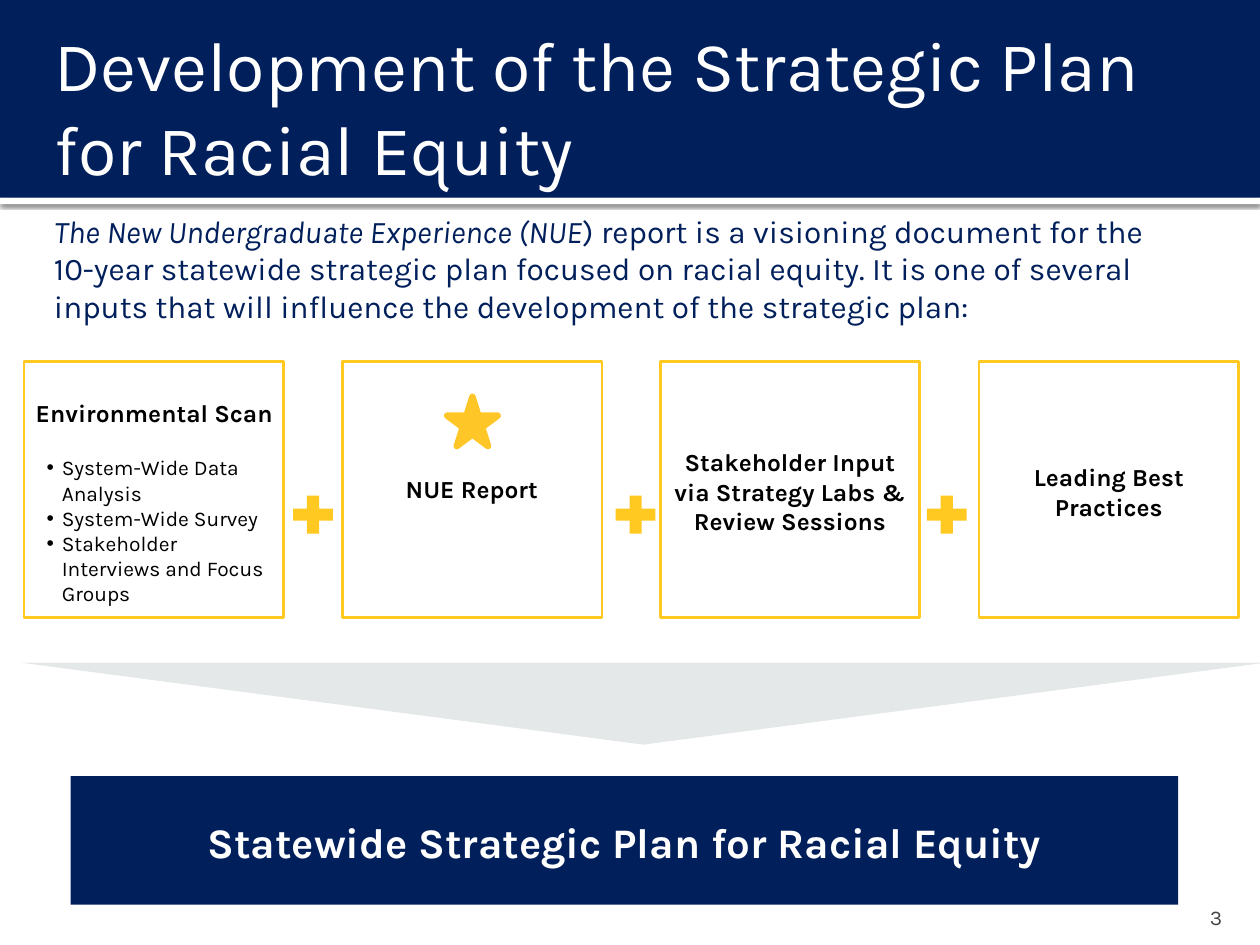
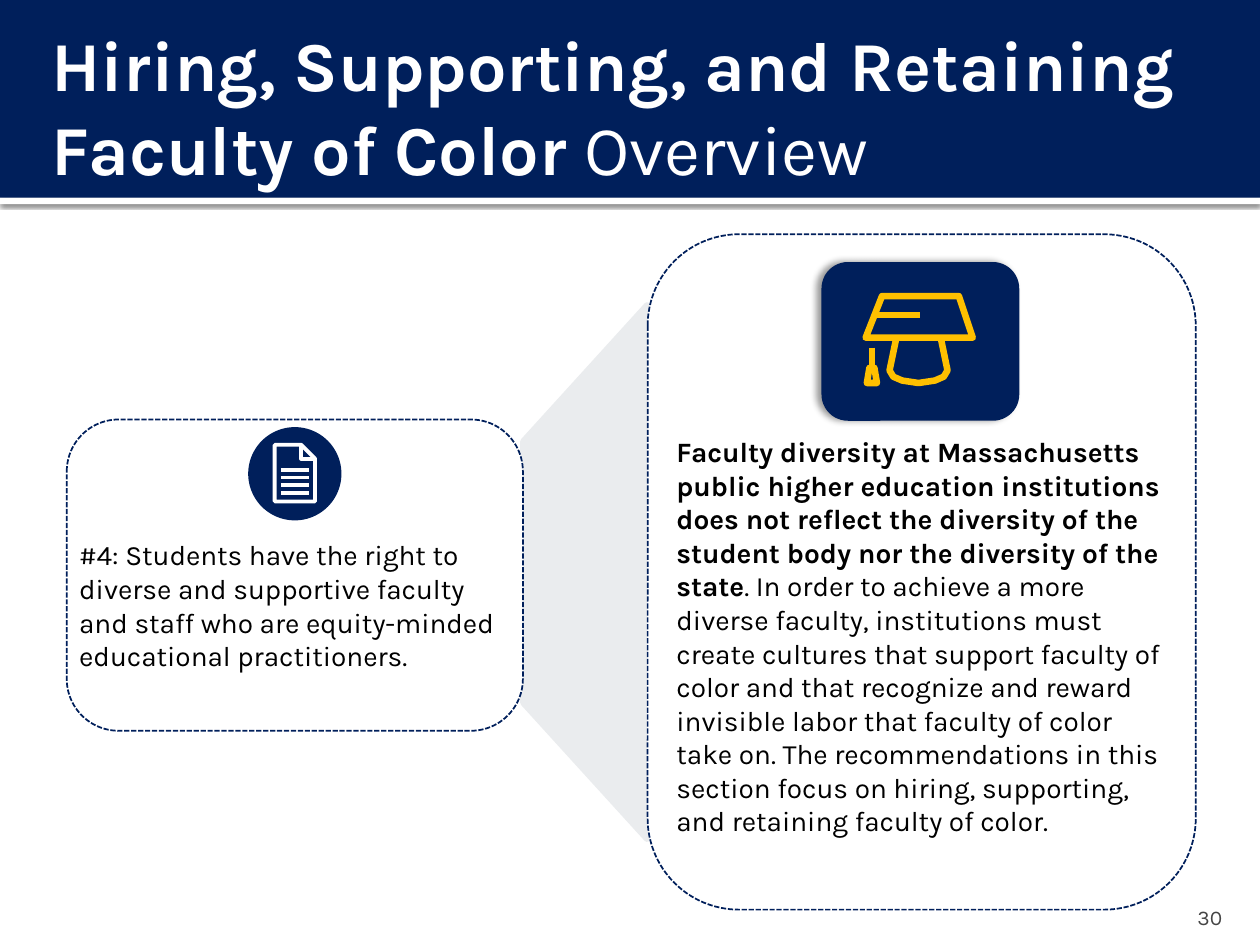
from lxml.etree import SubElement
from pptx import Presentation
from pptx.dml.color import RGBColor
from pptx.enum.dml import MSO_LINE
from pptx.enum.shapes import MSO_SHAPE
from pptx.enum.text import MSO_ANCHOR, MSO_AUTO_SIZE, PP_ALIGN
from pptx.oxml.ns import qn
from pptx.util import Pt

PX = 9144
FONT = "Karla"
NAVY = RGBColor(0x00, 0x1F, 0x5B)
GOLD = RGBColor(0xFF, 0xC9, 0x21)
STAR_GOLD = RGBColor(0xFF, 0xC6, 0x27)
CAP_GOLD = RGBColor(0xFF, 0xC0, 0x00)
WHITE = RGBColor(0xFF, 0xFF, 0xFF)
BLACK = RGBColor(0x00, 0x00, 0x00)
NUMBER_GRAY = RGBColor(0x45, 0x45, 0x45)
ARROW_GRAY = RGBColor(0xE4, 0xE8, 0xE8)
FUNNEL_GRAY = RGBColor(0xEA, 0xEC, 0xEE)


def write_text(shape, text, lead="", lead_style="bold", size=16, color=BLACK, bold=False,
               align=PP_ALIGN.LEFT, anchor=MSO_ANCHOR.TOP, insets=(10, 5, 10, 5), line_spacing=1.0):
    frame = shape.text_frame
    frame.word_wrap = True
    frame.auto_size = MSO_AUTO_SIZE.NONE
    frame.vertical_anchor = anchor
    frame.margin_left, frame.margin_top, frame.margin_right, frame.margin_bottom = [
        inset * PX for inset in insets]
    for index, line in enumerate(text.split("\n")):
        paragraph = frame.add_paragraph() if index else frame.paragraphs[0]
        paragraph.alignment = align
        paragraph.line_spacing = line_spacing
        paragraph.space_before = Pt(0)
        for part, is_lead in ((lead, True), (line, False)):
            if not part:
                continue
            run = paragraph.add_run()
            run.text = part
            run.font.name = FONT
            run.font.size = Pt(size)
            run.font.color.rgb = color
            run.font.bold = bold or (is_lead and lead_style == "bold")
            run.font.italic = is_lead and lead_style == "italic"


def add_block(slide, kind, box, fill=None, line=None, line_width=1.0, dash=None, shadow=None):
    shape = slide.shapes.add_shape(kind, *[length * PX for length in box])
    shape.shadow.inherit = False
    if fill is None:
        shape.fill.background()
    else:
        shape.fill.solid()
        shape.fill.fore_color.rgb = fill
    if line is None:
        shape.line.fill.background()
    else:
        shape.line.color.rgb = line
        shape.line.width = Pt(line_width)
        shape.line.dash_style = dash
    if shadow:
        blur, distance, degrees, opacity = shadow
        effects = shape._element.spPr.find(qn("a:effectLst"))
        outer = SubElement(effects, qn("a:outerShdw"), blurRad=str(Pt(blur)), dist=str(Pt(distance)),
                           dir=str(degrees * 60000), algn="ctr", rotWithShape="0")
        shadow_color = SubElement(outer, qn("a:srgbClr"), val="000000")
        SubElement(shadow_color, qn("a:alpha"), val=str(opacity * 1000))
    return shape


presentation = Presentation()
presentation.slide_width = 1000 * PX
presentation.slide_height = 750 * PX
plan_slide = presentation.slides.add_slide(presentation.slide_layouts[1])
faculty_slide = presentation.slides.add_slide(presentation.slide_layouts[5])

strip = add_block(plan_slide, MSO_SHAPE.RECTANGLE, (0, 157, 1000, 5), WHITE, shadow=(2.5, 0.8, 90, 60))
band = add_block(plan_slide, MSO_SHAPE.RECTANGLE, (0, 0, 1000, 157), NAVY)
for position, shape in enumerate((strip, band)):
    shape._element.nvSpPr.cNvPr.set("id", str(101 + position))
    presentation.slide_master.shapes._spTree.insert(2 + position, shape._element)

slide_headers = [
    (plan_slide, "3", "", "Development of the Strategic Plan for Racial Equity",
     (43, 38, 888, 92), (0, 0, 0, 0)),
    (faculty_slide, "30", "Hiring, Supporting, and Retaining Faculty of Color ", "Overview",
     (31, 38, 952, 92), (10, 5, 5, 5)),
]
for slide, number, lead, title_text, box, insets in slide_headers:
    title = slide.shapes.title
    title.left, title.top, title.width, title.height = [length * PX for length in box]
    write_text(title, title_text, lead=lead, size=40, color=WHITE,
               anchor=MSO_ANCHOR.MIDDLE, insets=insets)
    number_box = slide.shapes.add_textbox(900 * PX, 708 * PX, 80 * PX, 30 * PX)
    write_text(number_box, number, size=12, color=NUMBER_GRAY, align=PP_ALIGN.RIGHT,
               anchor=MSO_ANCHOR.BOTTOM, insets=(10, 5, 10, 0))

intro = plan_slide.shapes.add_textbox(33 * PX, 163 * PX, 907 * PX, 101 * PX)
write_text(intro, ") report is a visioning document for the 10-year statewide strategic plan focused on "
           "racial equity. It is one of several inputs that will influence the development of the "
           "strategic plan:", lead="The New Undergraduate Experience (NUE", lead_style="italic",
           size=18, color=NAVY)

inputs = [
    ("Environmental Scan", 19, (21, 316, 203, 24)),
    ("NUE Report", 272, (273, 376, 203, 24)),
    ("Stakeholder Input via Strategy Labs & Review Sessions", 524, (531, 355, 192, 71)),
    ("Leading Best\nPractices", 777, (784, 367, 192, 47)),
]
for label, left, label_box in inputs:
    add_block(plan_slide, MSO_SHAPE.RECTANGLE, (left, 287, 206, 203), line=GOLD, line_width=1.5)
    label_shape = plan_slide.shapes.add_textbox(*[length * PX for length in label_box])
    write_text(label_shape, label, size=14, bold=True, align=PP_ALIGN.CENTER, insets=(0, 0, 0, 0))

scan_list = plan_slide.placeholders[1]
scan_list.left, scan_list.top, scan_list.width, scan_list.height = 17 * PX, 361 * PX, 203 * PX, 124 * PX
write_text(scan_list, "System-Wide Data Analysis\nSystem-Wide Survey\n"
           "Stakeholder Interviews and Focus Groups", size=12, insets=(0, 0, 0, 0))
for paragraph in scan_list.text_frame.paragraphs:
    properties = paragraph._p.get_or_add_pPr()
    properties.set("marL", str(32 * PX))
    properties.set("indent", str(-12 * PX))

for left in (227, 483, 730):
    add_block(plan_slide, MSO_SHAPE.MATH_PLUS, (left, 388, 43, 41), GOLD)
star = add_block(plan_slide, MSO_SHAPE.STAR_5_POINT, (355, 315, 40, 39), STAR_GOLD, STAR_GOLD, 3.78)
star.adjustments[0] = 0.19
arrow = add_block(plan_slide, MSO_SHAPE.ISOSCELES_TRIANGLE, (17, 526, 987, 65), ARROW_GRAY)
arrow.rotation = 180
outcome = add_block(plan_slide, MSO_SHAPE.RECTANGLE, (56, 616, 879, 102), NAVY)
write_text(outcome, "Statewide Strategic Plan for Racial Equity", size=24, color=WHITE, bold=True,
           align=PP_ALIGN.CENTER, anchor=MSO_ANCHOR.MIDDLE, insets=(10, 10, 10, 10), line_spacing=1.06)

funnel = add_block(faculty_slide, MSO_SHAPE.TRAPEZOID, (253, 405, 423, 98),
                   FUNNEL_GRAY, FUNNEL_GRAY, 3.78)
funnel.rotation = 270
funnel.adjustments[0] = 1.1
for box in ((53, 333, 362, 247), (514, 186, 435, 536)):
    add_block(faculty_slide, MSO_SHAPE.ROUNDED_RECTANGLE, box, WHITE, NAVY, 1, MSO_LINE.SQUARE_DOT)
add_block(faculty_slide, MSO_SHAPE.OVAL, (197, 339, 74, 74), NAVY)
add_block(faculty_slide, MSO_SHAPE.ROUNDED_RECTANGLE, (652, 208, 157, 126), NAVY,
          shadow=(4, 3, 180, 40))

right_text = faculty_slide.shapes.add_textbox(53 * PX, 422 * PX, 362 * PX, 145 * PX)
write_text(right_text, "#4: Students have the right to diverse and supportive faculty and staff who are "
           "equity-minded educational practitioners.")
diversity_text = faculty_slide.shapes.add_textbox(527 * PX, 340 * PX, 408 * PX, 333 * PX)
write_text(diversity_text, ". In order to achieve a more diverse faculty, institutions must create cultures "
           "that support faculty of color and that recognize and reward invisible labor that faculty of "
           "color take on. The recommendations in this section focus on hiring, supporting, and retaining "
           "faculty of color.",
           lead="Faculty diversity at Massachusetts public higher education institutions does not reflect "
           "the diversity of the student body nor the diversity of the state")

page_strokes = [
    ([(218, 353), (239, 353), (250, 364), (250, 398), (218, 398)], True),
    ([(239, 353), (239, 364), (250, 364)], False),
] + [([(223, y), (245, y)], False) for y in range(373, 392, 6)]
cap_strokes = [
    ([(700, 235), (761, 235), (772, 268), (687, 268)], True),
    ([(695, 250), (730, 250)], False),
    ([(711, 270), (706, 294), (709, 299), (716, 302), (729, 304),
      (742, 302), (749, 299), (752, 294), (747, 270)], False),
    ([(692, 276), (692, 291)], False),
    ([(690, 292), (694, 292), (696, 304), (688, 304)], True),
]
for strokes, color, width in ((page_strokes, WHITE, 2.2), (cap_strokes, CAP_GOLD, 3.75)):
    builder = faculty_slide.shapes.build_freeform(*strokes[0][0][0], scale=PX)
    for points, closed in strokes:
        builder.move_to(*points[0])
        builder.add_line_segments(points[1:], close=closed)
    icon = builder.convert_to_shape()
    icon.shadow.inherit = False
    icon.fill.background()
    icon.line.color.rgb = color
    icon.line.width = Pt(width)

presentation.save("out.pptx")
